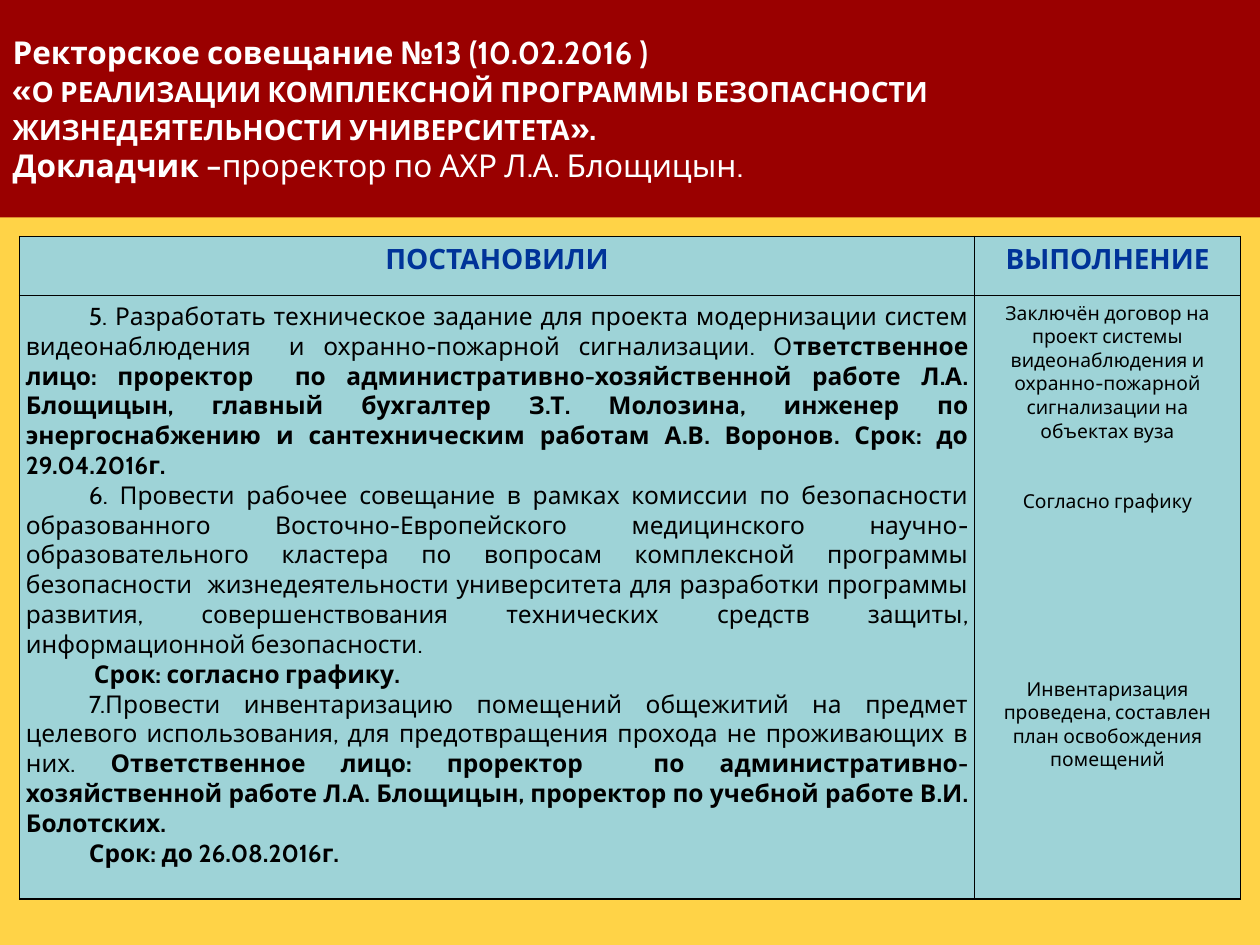
from dataclasses import dataclass

import pptx
import pptx.dml.color
import pptx.enum.text
import pptx.oxml.ns
import pptx.util
from lxml import etree

Align = pptx.enum.text.PP_ALIGN
Color = pptx.dml.color.RGBColor.from_string
Inches = pptx.util.Inches
Pt = pptx.util.Pt
qn = pptx.oxml.ns.qn


@dataclass(frozen=True)
class Theme:
    font: str = "Cabin"
    page: str = "FFD347"
    band: str = "9A0000"
    cell: str = "9ED3D7"
    head: str = "003399"
    ink: str = "000000"
    white: str = "FFFFFF"
    lead: int = 18
    label: int = 16
    body: int = 14
    note: int = 11


@dataclass(frozen=True)
class Span:
    text: str
    size: int
    bold: bool = False
    color: str = Theme.ink


@dataclass(frozen=True)
class Para:
    spans: tuple[Span, ...]
    align: Align = Align.CENTER
    indent: float = 0
    start: int = 0
    gap: float = 0


THEME = Theme()
WIDE, HIGH = 10, 7.5
LINE = 1.22  # line height as a share of the type size
STEP = 0.5   # first-line indent of a decision, inches


def title(text: str, size: int, bold: bool = True) -> Span:
    return Span(text, size, bold, THEME.white)


def item(*spans: tuple[str, bool], indent: float = STEP, start: int = 0) -> Para:
    parts = tuple(Span(text, THEME.body, bold) for text, bold in spans)
    return Para(parts, Align.JUSTIFY, indent, start)


def note(text: str, skip: int = 0) -> Para:
    """A centred remark that stands a number of lines below the one before."""
    return Para((Span(text, THEME.note),), gap=skip * THEME.note * LINE)


def head(text: str) -> Para:
    return Para((Span(text, THEME.label, True, THEME.head),))


TITLE = Para((
    title("Ректорское совещание №13 (10.02.2016 )\n«", THEME.lead),
    title("О РЕАЛИЗАЦИИ КОМПЛЕКСНОЙ ПРОГРАММЫ БЕЗОПАСНОСТИ\n"
          "ЖИЗНЕДЕЯТЕЛЬНОСТИ УНИВЕРСИТЕТА", THEME.label),
    title("».\nДокладчик –", THEME.lead),
    title("проректор по АХР Л.А. Блощицын.", THEME.lead, False),
), Align.LEFT)

TASKS = [
    item(("5. Разработать техническое задание для проекта модернизации систем "
          "видеонаблюдения  и охранно-пожарной сигнализации. О", False),
         ("тветственное лицо: проректор  по административно-хозяйственной работе "
          "Л.А. Блощицын, главный бухгалтер З.Т. Молозина, инженер по "
          "энергоснабжению и сантехническим работам А.В. Воронов. "
          "Срок: до 29.04.2016г.", True)),
    item(("6. Провести рабочее совещание в рамках комиссии по безопасности "
          "образованного Восточно-Европейского медицинского "
          "научно-образовательного кластера по вопросам комплексной программы "
          "безопасности  жизнедеятельности университета для разработки программы "
          "развития, совершенствования технических средств защиты, "
          "информационной безопасности.", False)),
    item(("Срок: согласно графику.", True), indent=STEP + 0.04),
    item(("Провести инвентаризацию помещений общежитий на предмет целевого "
          "использования, для предотвращения прохода не проживающих в них. ", False),
         ("Ответственное лицо: проректор  по административно-хозяйственной работе "
          "Л.А. Блощицын, проректор по учебной работе В.И. Болотских.", True),
         start=7),
    item(("Срок: до 26.08.2016г.", True)),
]

NOTES = [
    note("Заключён договор на проект системы видеонаблюдения и "
         "охранно-пожарной сигнализации на объектах вуза"),
    note("Согласно графику", 2),
    note("Инвентаризация проведена, составлен план освобождения помещений", 7),
]

CELLS = [[[head("ПОСТАНОВИЛИ")], [head("ВЫПОЛНЕНИЕ")]], [TASKS, NOTES]]


def write(frame, paras: list[Para]) -> None:
    for i, para in enumerate(paras):
        line = frame.paragraphs[0] if i == 0 else frame.add_paragraph()
        line.alignment = para.align
        line.space_before = Pt(round(para.gap, 1))
        props = line._p.get_or_add_pPr()
        if para.indent:
            props.set("marL", "0")
            props.set("indent", str(Inches(para.indent)))
        if para.start:
            etree.SubElement(props, qn("a:buAutoNum"), type="arabicPeriod",
                             startAt=str(para.start))
        for span in para.spans:
            for j, text in enumerate(span.text.split("\n")):
                if j:
                    line.add_line_break()
                    etree.SubElement(line._p[-1], qn("a:rPr"),
                                     sz=str(span.size * 100))
                run = line.add_run()
                run.text = text
                run.font.name = THEME.font
                run.font.size = Pt(span.size)
                run.font.bold = span.bold
                run.font.color.rgb = Color(span.color)


def border(cell) -> None:
    props = cell._tc.get_or_add_tcPr()
    for side in "LRTB":
        edge = etree.SubElement(props, qn(f"a:ln{side}"), w=str(Pt(1)))
        fill = etree.SubElement(edge, qn("a:solidFill"))
        etree.SubElement(fill, qn("a:srgbClr"), val=THEME.ink)


def paint(cell, paras: list[Para]) -> None:
    border(cell)
    cell.fill.solid()
    cell.fill.fore_color.rgb = Color(THEME.cell)
    cell.margin_left = cell.margin_right = Inches(0.05)
    cell.margin_top = cell.margin_bottom = Inches(0.05)
    write(cell.text_frame, paras)


def banner(shape) -> None:
    shape.left = shape.top = 0
    shape.width, shape.height = Inches(WIDE), Inches(0.23 * HIGH)
    shape.fill.solid()
    shape.fill.fore_color.rgb = Color(THEME.band)
    frame = shape.text_frame
    frame.word_wrap = True
    frame.auto_size = pptx.enum.text.MSO_AUTO_SIZE.NONE
    frame.vertical_anchor = pptx.enum.text.MSO_ANCHOR.MIDDLE
    write(frame, [TITLE])


def grid(slide) -> None:
    cols, rows = (7.58, 2.11), (0.47, 4.79)
    table = slide.shapes.add_table(
        len(rows), len(cols), Inches((WIDE - sum(cols)) / 2), Inches(HIGH / 4),
        Inches(sum(cols)), Inches(sum(rows))).table
    table.horz_banding = False
    for col, width in zip(table.columns, cols):
        col.width = Inches(width)
    for row, height, texts in zip(table.rows, rows, CELLS):
        row.height = Inches(height)
        for cell, paras in zip(row.cells, texts):
            paint(cell, paras)


def main() -> None:
    deck = pptx.Presentation()
    deck.slide_width, deck.slide_height = Inches(WIDE), Inches(HIGH)
    slide = deck.slides.add_slide(deck.slide_layouts.get_by_name("Title Only"))
    slide.background.fill.solid()
    slide.background.fill.fore_color.rgb = Color(THEME.page)
    banner(slide.shapes.title)
    grid(slide)
    deck.save("out.pptx")


if __name__ == "__main__":
    main()
